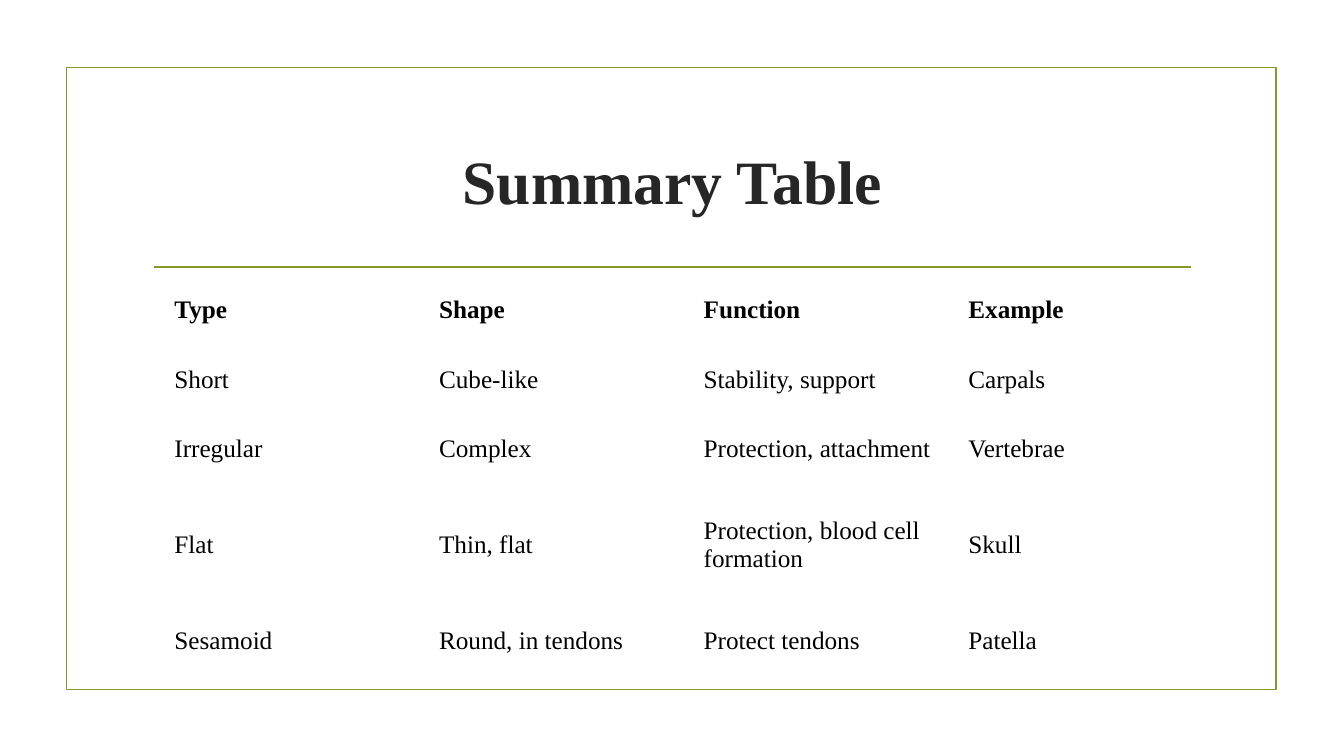
from pptx import Presentation
from pptx.dml.color import RGBColor
from pptx.enum.shapes import MSO_CONNECTOR, MSO_SHAPE
from pptx.enum.text import MSO_ANCHOR, PP_ALIGN
from pptx.oxml.ns import qn
from pptx.util import Inches, Pt
from lxml.etree import SubElement

OLIVE = RGBColor(0x83, 0x99, 0x2A)
DARK = RGBColor(0x26, 0x26, 0x26)
BLACK = RGBColor(0, 0, 0)
FACE = "Times New Roman"
ROWS = [
    ("Type", "Shape", "Function", "Example"),
    ("Short", "Cube-like", "Stability, support", "Carpals"),
    ("Irregular", "Complex", "Protection, attachment", "Vertebrae"),
    ("Flat", "Thin, flat", "Protection, blood cell formation", "Skull"),
    ("Sesamoid", "Round, in tendons", "Protect tendons", "Patella"),
]
ROW, TALL = 0.69, 1.21


def style(para, size, color, bold):
    font = para.font
    font.name, font.size, font.bold = FACE, Pt(size), bold
    font.color.rgb = color


def add_frame(slide, box):
    frame = slide.shapes.add_shape(MSO_SHAPE.RECTANGLE, *map(Inches, box))
    frame.shadow.inherit = False
    frame.fill.background()
    frame.line.color.rgb = OLIVE
    frame.line.width = Pt(1.25)


def add_rule(slide, left, top, width):
    ends = map(Inches, (left, top, left + width, top))
    rule = slide.shapes.add_connector(MSO_CONNECTOR.STRAIGHT, *ends)
    rule.line.color.rgb = OLIVE
    rule.line.width = Pt(1.25)
    SubElement(rule._element.spPr, qn("a:effectLst"))


def add_title(slide, box, text):
    frame = slide.shapes.add_textbox(*map(Inches, box)).text_frame
    frame.word_wrap = True
    frame.vertical_anchor = MSO_ANCHOR.MIDDLE
    para = frame.paragraphs[0]
    para.text = text
    para.alignment = PP_ALIGN.CENTER
    style(para, 44, DARK, True)


def add_grid(slide, box, rows):
    table = slide.shapes.add_table(len(rows), len(rows[0]), *map(Inches, box)).table
    table.first_row = table.horz_banding = False
    for r, texts in enumerate(rows):
        table.rows[r].height = Inches(TALL if r == 3 else ROW)
        for c, text in enumerate(texts):
            cell = table.cell(r, c)
            cell.fill.background()
            cell.vertical_anchor = MSO_ANCHOR.MIDDLE
            cell.text = text
            style(cell.text_frame.paragraphs[0], 18, BLACK, r == 0)


def main():
    deck = Presentation()
    deck.slide_width, deck.slide_height = Inches(13.33), Inches(7.5)
    slide = deck.slides.add_slide(deck.slide_layouts[6])
    add_frame(slide, (0.66, 0.67, 12, 6.17))
    add_rule(slide, 1.53, 2.65, 10.28)
    add_title(slide, (1.42, 1.07, 10.5, 1.43), "Summary Table")
    add_grid(slide, (1.63, 2.73, 10.5, 4 * ROW + TALL), ROWS)
    deck.save("out.pptx")


if __name__ == "__main__":
    main()
